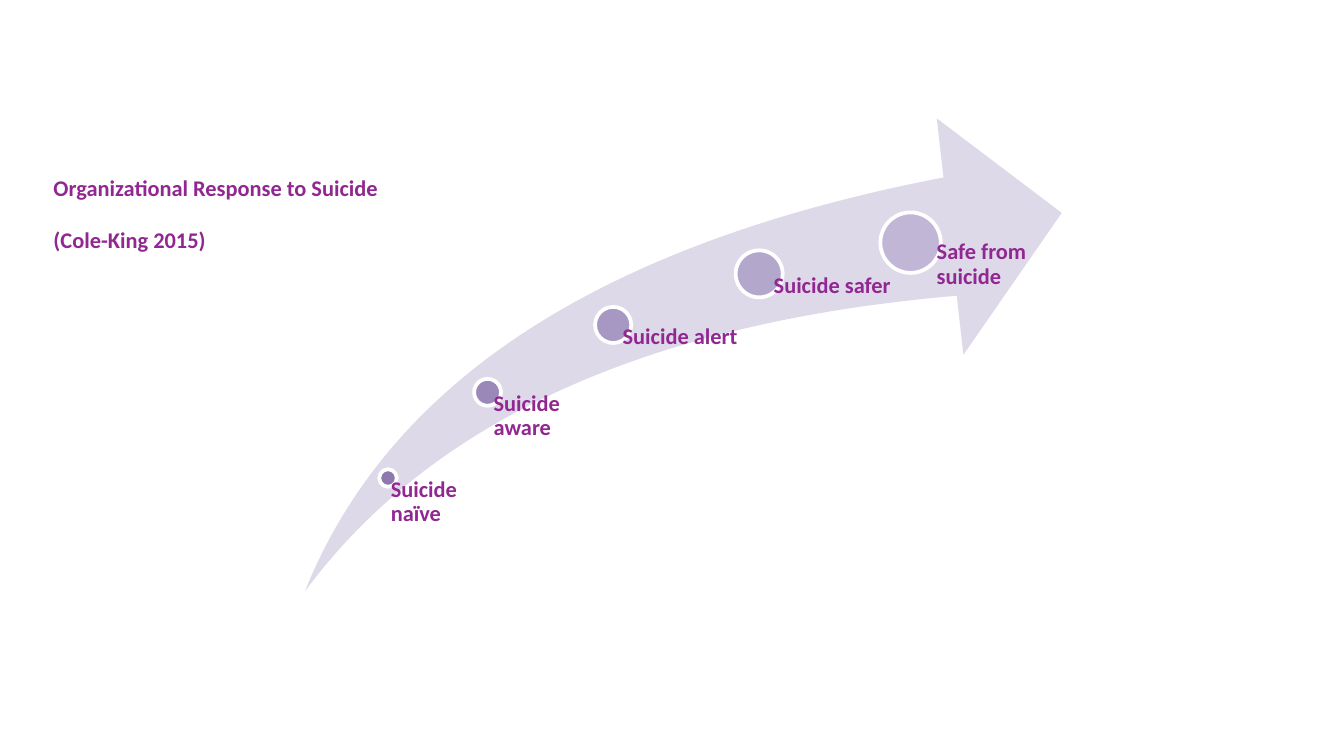
from pptx import Presentation
from pptx.dml.color import RGBColor
from pptx.enum.shapes import MSO_SHAPE
from pptx.util import Pt

PURPLE = RGBColor(0x91, 0x27, 0x91)
LILAC = RGBColor(0xDE, 0xD9, 0xE8)
WHITE = RGBColor(0xFF, 0xFF, 0xFF)

# label, dot (left, top, diameter), dot colour, text box (left, top, width, height), left inset
STAGES = [
    ("Suicide naïve", (203.2, 251.4, 9.4), RGBColor(0x8E, 0x79, 0xAE),
     (204.4, 256.3, 60.5, 60.5), 5),
    ("Suicide aware", (254, 203, 14.4), RGBColor(0x9A, 0x88, 0xB8),
     (256.5, 210.2, 76.3, 106.6), 8),
    ("Suicide alert", (318.8, 164.4, 19.4), RGBColor(0xA7, 0x97, 0xC3),
     (323.3, 174.2, 89.3, 142.6), 10.3),
    ("Suicide safer", (394.1, 134.1, 25.2), RGBColor(0xB4, 0xA7, 0xCC),
     (401, 146.9, 92.2, 169.9), 13.5),
    ("Safe from suicide", (471.6, 113.8, 32.4), RGBColor(0xC2, 0xB6, 0xD6),
     (484.6, 128.9, 92.2, 186.5), 17.2),
]


def add_filled(kind, box, color):
    sp = s.shapes.add_shape(kind, *map(Pt, box))
    sp.shadow.inherit = False
    sp.fill.solid()
    sp.fill.fore_color.rgb = color
    return sp


def add_run(p, text):
    r = p.add_run()
    r.text = text
    r.font.name = "Calibri"
    r.font.size = Pt(12)
    r.font.bold = True
    r.font.color.rgb = PURPLE


prs = Presentation()
prs.slide_width, prs.slide_height = Pt(720), Pt(405)
s = prs.slides.add_slide(prs.slide_layouts[6])

arrow = add_filled(MSO_SHAPE.SWOOSH_ARROW, (163.4, 63.4, 405.4, 253.4), LILAC)
arrow.adjustments[0] = 0.25
arrow.adjustments[1] = 0.25
arrow.line.fill.background()

for label, (left, top, size), color, box, inset in STAGES:
    dot = add_filled(MSO_SHAPE.OVAL, (left, top, size, size), color)
    dot.line.color.rgb = WHITE
    dot.line.width = Pt(2)

    tf = s.shapes.add_textbox(*map(Pt, box)).text_frame
    tf.word_wrap = True
    tf.margin_left = Pt(inset)
    tf.margin_top = tf.margin_right = tf.margin_bottom = 0
    p = tf.paragraphs[0]
    p.line_spacing = 0.9
    add_run(p, label)

tf = s.shapes.add_textbox(Pt(21.6), Pt(90), Pt(698.4), Pt(49.7)).text_frame
tf.word_wrap = True
p = tf.paragraphs[0]
p.space_after = Pt(13)
add_run(p, "Organizational Response to Suicide")
add_run(tf.add_paragraph(), "(Cole-King 2015)")

prs.save("out.pptx")
